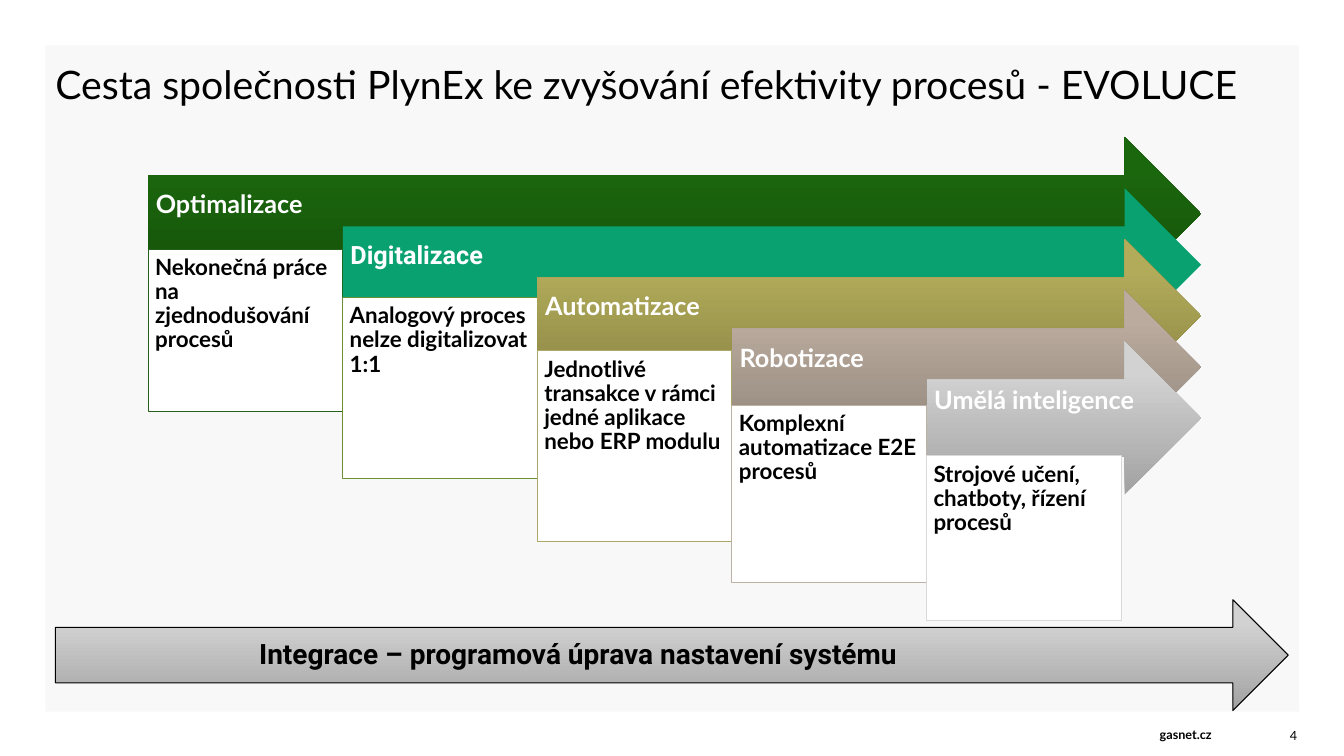
"""Build the slide on the evolution of process efficiency."""
from pptx import Presentation
from pptx.dml.color import RGBColor
from pptx.enum import shapes, text
from pptx.util import Pt

COLORS = {
    "black": "000000",
    "white": "FFFFFF",
    "panel": "F8F8F8",
    "green": ("15500A", "1B670D"),
    "teal": ("0AA170",),
    "olive": ("898445", "B2AB5A"),
    "taupe": ("908479", "BBAB9E"),
    "grey": ("A2A2A2", "D2D2D2"),
    "green line": "236018",
    "teal line": "6D9037",
    "olive line": "ADA868",
    "taupe line": "BDB1A6",
    "grey line": "D9D9D9",
}
TOP, MIDDLE, BOTTOM = (
    text.MSO_ANCHOR.TOP, text.MSO_ANCHOR.MIDDLE, text.MSO_ANCHOR.BOTTOM)
LEFT, CENTER, RIGHT = text.PP_ALIGN.LEFT, text.PP_ALIGN.CENTER, text.PP_ALIGN.RIGHT

STAGE_LEFT, STAGE_TOP, STAGE_RIGHT = 105.84, 97.9, 858
STEP_X, STEP_Y, ARROW_HEIGHT = 139, 36.5, 109.4
STAGES = [
    ("Optimalizace", "Nekonečná práce na zjednodušování procesů",
     "green", "Lato", MIDDLE, 178, 116),
    ("Digitalizace", "Analogový proces nelze digitalizovat 1:1",
     "teal", "Roboto", MIDDLE, 212.5, 129.5),
    ("Automatizace", "Jednotlivé transakce v rámci jedné aplikace nebo ERP modulu",
     "olive", "Lato", MIDDLE, 250.5, 136.5),
    ("Robotizace", "Komplexní automatizace E2E procesů",
     "taupe", "Lato", MIDDLE, 289.5, 126.5),
    ("Umělá inteligence", "Strojové učení, chatboty, řízení procesů",
     "grey", "Lato", TOP, 325.5, 117.5),
]


def rgb(name):
    return RGBColor.from_string(COLORS[name])


def place(shape, left, top, width, height):
    shape.left, shape.top = Pt(left), Pt(top)
    shape.width, shape.height = Pt(width), Pt(height)


def write(shape, words, size, color="black", font="Lato", bold=True, align=LEFT,
          anchor=TOP, insets=(0, 0, 0, 0), spacing=1.0):
    frame = shape.text_frame
    frame.text = words
    frame.word_wrap = True
    frame.auto_size = text.MSO_AUTO_SIZE.NONE
    frame.vertical_anchor = anchor
    (frame.margin_left, frame.margin_top,
     frame.margin_right, frame.margin_bottom) = map(Pt, insets)
    paragraph = frame.paragraphs[0]
    paragraph.alignment = align
    paragraph.line_spacing = spacing
    paragraph.font.name = font
    paragraph.font.size = Pt(size)
    paragraph.font.bold = bold
    paragraph.font.color.rgb = rgb(color)


def set_line(shape, color):
    if color:
        shape.line.color.rgb = rgb(color)
        shape.line.width = Pt(0.75)
    else:
        shape.line.fill.background()


def add_box(slide, bounds, fill, line=None):
    shape = slide.shapes.add_shape(shapes.MSO_SHAPE.RECTANGLE, *map(Pt, bounds))
    shape.shadow.inherit = False
    shape.fill.solid()
    shape.fill.fore_color.rgb = rgb(fill)
    set_line(shape, line)
    return shape


def add_arrow(slide, bounds, fill, line=None):
    shape = slide.shapes.add_shape(shapes.MSO_SHAPE.RIGHT_ARROW, *map(Pt, bounds))
    shape.shadow.inherit = False
    tones = [RGBColor.from_string(tone) for tone in COLORS[fill]]
    if len(tones) == 1:
        shape.fill.solid()
        shape.fill.fore_color.rgb = tones[0]
    else:
        shape.fill.gradient()
        shape.fill.gradient_angle = 90
        for stop, tone, position in zip(shape.fill.gradient_stops, tones, (0, 0.8)):
            stop.color.rgb = tone
            stop.position = position
    set_line(shape, line)
    return shape


def add_stage(slide, index, name, detail, color, font, anchor, box_top, box_height):
    left = STAGE_LEFT + index * STEP_X
    top = STAGE_TOP + index * STEP_Y
    arrow = add_arrow(slide, (left, top, STAGE_RIGHT - left, ARROW_HEIGHT), color)
    write(arrow, name, 18, "white", font, anchor=anchor,
          insets=(5.5, 5.5, 20, 17), spacing=0.9)
    box = add_box(slide, (left, box_top, STEP_X, box_height), "white", color + " line")
    write(box, detail, 16, insets=(5, 5, 5, 5), spacing=0.9)


def add_label(slide, bounds, words, bold):
    label = slide.shapes.add_textbox(*map(Pt, bounds))
    write(label, words, 9, bold=bold, align=RIGHT, anchor=BOTTOM)


def main():
    presentation = Presentation()
    presentation.slide_width, presentation.slide_height = Pt(960), Pt(540)
    slide = presentation.slides.add_slide(presentation.slide_layouts[5])

    panel = add_box(slide, (32.4, 32.4, 895.7, 476), "panel")
    title = slide.shapes.title
    panel._element.addnext(title._element)
    place(title, 39.6, 43.2, 880.6, 45.4)
    write(title, "Cesta společnosti PlynEx ke zvyšování efektivity procesů - EVOLUCE",
          28, bold=False)

    for index, stage in enumerate(STAGES):
        add_stage(slide, index, *stage)

    integration = add_arrow(slide, (39.6, 428.4, 880.6, 79.2), "grey", "black")
    write(integration, "Integrace – programová úprava nastavení systému", 20,
          font="Roboto", align=CENTER, anchor=BOTTOM,
          insets=(8.6, 0, 122.6, 9), spacing=0.9)

    add_label(slide, (776.9, 519, 88.6, 11), "gasnet.cz", True)
    add_label(slide, (892.8, 516.2, 33.8, 14.4), "4", False)
    presentation.save("out.pptx")


if __name__ == "__main__":
    main()
